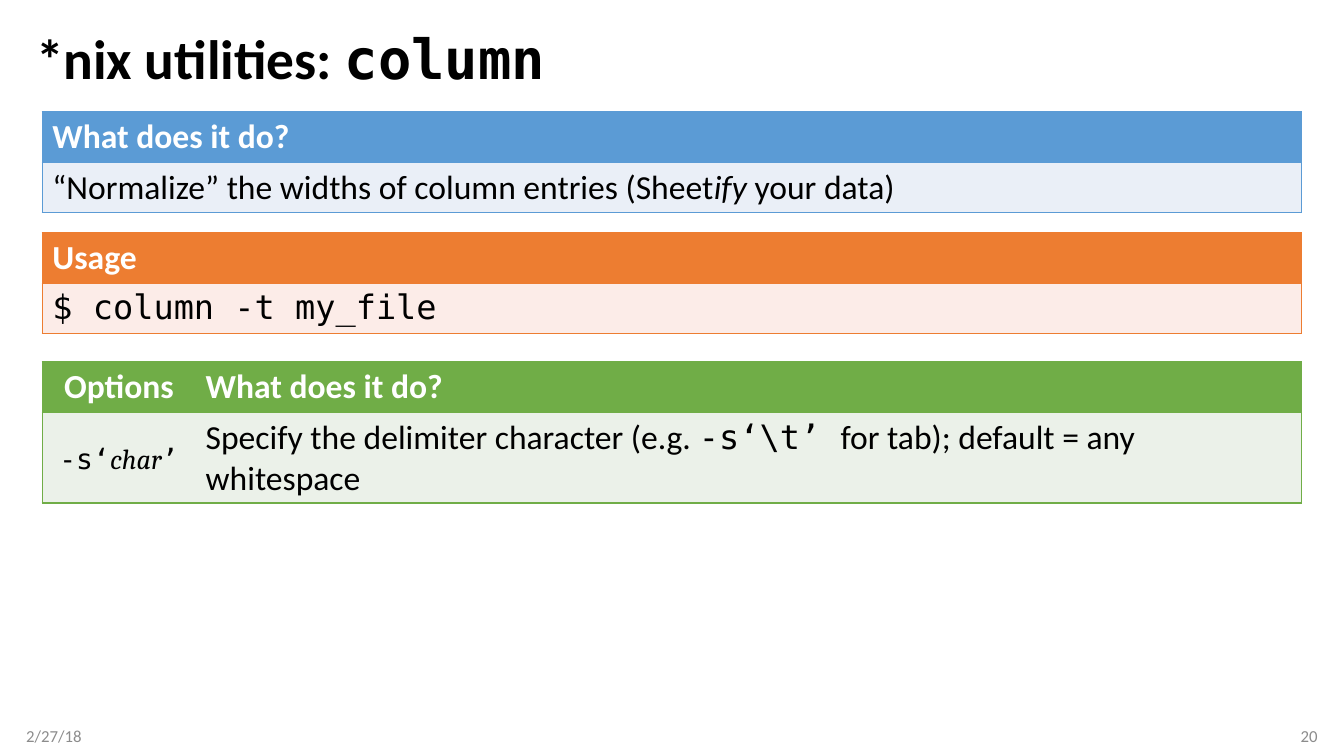
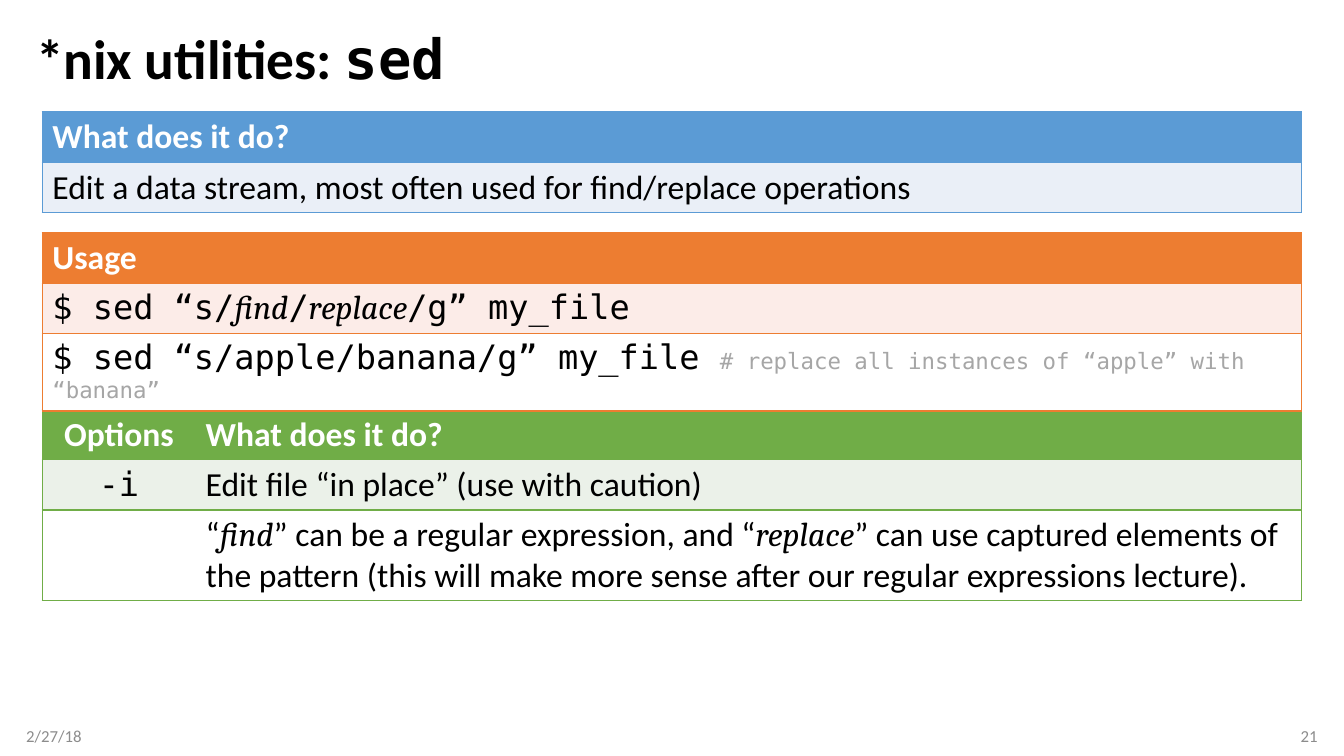
from dataclasses import dataclass, field

import pptx
import pptx.dml.color
import pptx.enum.text
import pptx.oxml
import pptx.oxml.ns
import pptx.util

Pt = pptx.util.Pt
RGBColor = pptx.dml.color.RGBColor
Align = pptx.enum.text.PP_ALIGN
Anchor = pptx.enum.text.MSO_ANCHOR

BLACK = RGBColor(0x00, 0x00, 0x00)
WHITE = RGBColor(0xFF, 0xFF, 0xFF)
FOOTER_GRAY = RGBColor(0x8C, 0x8C, 0x8C)
REMARK_GRAY = RGBColor(0xA6, 0xA6, 0xA6)
BLUE, BLUE_TINT = RGBColor(0x5B, 0x9B, 0xD5), RGBColor(0xEA, 0xEF, 0xF7)
ORANGE, ORANGE_TINT = RGBColor(0xED, 0x7D, 0x31), RGBColor(0xFC, 0xEC, 0xE8)
GREEN, GREEN_TINT = RGBColor(0x70, 0xAD, 0x47), RGBColor(0xEB, 0xF1, 0xE9)

PAGE_WIDTH, PAGE_HEIGHT = 960, 540
MARGIN = 18.75
FOOTER_TOP, FOOTER_WIDTH, FOOTER_HEIGHT = 511, 216, 29
TABLE_LEFT, ROW_HEIGHT = 30.25, 29.5
OPTION_WIDTH, TEXT_WIDTH = 109.5, 789.75
PURPOSE_TOP, USAGE_TOP = 80, 166.25

BODY = {"name": "Calibri", "size": Pt(24), "bold": False, "italic": False, "color": BLACK}
HEADER = {**BODY, "bold": True, "color": WHITE}
CODE = {**BODY, "name": "DejaVu Sans Mono"}
VARIABLE = {**BODY, "name": "Cambria", "italic": True}
REMARK = {**CODE, "size": Pt(16), "color": REMARK_GRAY}
SMALL = {"size": Pt(20)}
TITLE = {**BODY, "size": Pt(39.6), "bold": True}
TITLE_CODE = {**TITLE, "name": CODE["name"]}
FOOTER = {**BODY, "size": Pt(12), "color": FOOTER_GRAY}


@dataclass
class Span:
    text: str
    format: dict = field(default_factory=lambda: BODY)


Line = list[Span]


@dataclass
class Panel:
    """A table with a coloured header row and striped rows below it."""
    top: float
    accent: RGBColor
    tint: RGBColor
    headers: list[str]
    rows: list[list[Line]]


@dataclass
class Utility:
    name: str
    number: int
    purpose: Line
    usage: list[Line]
    options_top: float
    options: list[list[Line]]


UTILITIES = [
    Utility(
        "column", 20,
        [Span("“Normalize” the widths of column entries (Sheet"),
         Span("ify", {**BODY, "italic": True}), Span(" your data)")],
        [[Span("$ column -t my_file", CODE)]],
        258.5,
        [[[Span("-s‘", {**CODE, **SMALL}), Span("char", {**VARIABLE, **SMALL}),
           Span("’", {**CODE, **SMALL}), Span(" ", CODE)],
          [Span("Specify the delimiter character (e.g. "), Span("-s‘\\t’ ", CODE),
           Span("for tab); default = any whitespace")]]],
    ),
    Utility(
        "sed", 21,
        [Span("Edit a data stream, most often used for find/replace operations")],
        [[Span("$ sed “s/", CODE), Span("find", VARIABLE), Span("/", CODE),
          Span("replace", VARIABLE), Span("/g” my_file", CODE)],
         [Span("$ sed “s/apple/banana/g” my_file ", CODE),
          Span("# replace all instances of “apple” with “banana”", REMARK)]],
        292.25,
        [[[Span("-i", CODE)], [Span("Edit file “in place” (use with caution)")]],
         [[], [Span("“"), Span("find", VARIABLE),
               Span("” can be a regular expression, and “"), Span("replace", VARIABLE),
               Span("” can use captured elements of the pattern (this will make more "
                    "sense after our regular expressions lecture).")]]],
    ),
]


def write_line(para, line: Line) -> None:
    for span in line:
        run = para.add_run()
        run.text = span.text
        for name, value in span.format.items():
            if name == "color":
                run.font.color.rgb = value
            else:
                setattr(run.font, name, value)


def add_text(page, left: float, top: float, width: float, height: float, line: Line,
             frame_format: dict, para_format: dict) -> None:
    box = page.shapes.add_textbox(Pt(left), Pt(top), Pt(width), Pt(height))
    frame = box.text_frame
    para = frame.paragraphs[0]
    base = {"word_wrap": True, "vertical_anchor": Anchor.MIDDLE}
    for target, values in ((frame, {**base, **frame_format}), (para, para_format)):
        for name, value in values.items():
            setattr(target, name, value)
    write_line(para, line)


def add_borders(cell, color: RGBColor, first: bool, last: bool) -> None:
    """Draw lines above, below and on the outer sides, none between columns."""
    properties = cell._tc.get_or_add_tcPr()
    for side, drawn in (("L", first), ("R", last), ("T", True), ("B", True)):
        paint = (f'<a:solidFill><a:srgbClr val="{color}"/></a:solidFill>'
                 if drawn else "<a:noFill/>")
        properties.append(pptx.oxml.parse_xml(
            f'<a:ln{side} {pptx.oxml.ns.nsdecls("a")} w="{Pt(1)}">{paint}</a:ln{side}>'))


def add_panel(page, panel: Panel) -> None:
    lines = [[[Span(text, HEADER)] for text in panel.headers], *panel.rows]
    count = len(panel.headers)
    split = count > 1
    widths = [OPTION_WIDTH, TEXT_WIDTH] if split else [OPTION_WIDTH + TEXT_WIDTH]
    table = page.shapes.add_table(
        len(lines), count, Pt(TABLE_LEFT), Pt(panel.top),
        Pt(sum(widths)), Pt(ROW_HEIGHT * len(lines))).table
    table.first_row = table.horz_banding = False
    for column, width in zip(table.columns, widths):
        column.width = Pt(width)
    for row, row_lines in enumerate(lines):
        table.rows[row].height = Pt(ROW_HEIGHT)
        stripe = panel.tint if row % 2 else WHITE
        for column, line in enumerate(row_lines):
            cell = table.cell(row, column)
            add_borders(cell, panel.accent, column == 0, column == count - 1)
            cell.fill.solid()
            cell.fill.fore_color.rgb = stripe if row else panel.accent
            cell.vertical_anchor = Anchor.MIDDLE if split else Anchor.TOP
            para = cell.text_frame.paragraphs[0]
            para.alignment = Align.CENTER if split and column == 0 else Align.LEFT
            write_line(para, line)


def add_frame(page, name: str, number: int) -> None:
    """Add the title, the date and the page number."""
    add_text(page, MARGIN, 18, PAGE_WIDTH - 2 * MARGIN, 52,
             [Span("*nix utilities: ", TITLE), Span(name, TITLE_CODE)],
             {}, {"line_spacing": 0.9})
    right = PAGE_WIDTH - MARGIN - FOOTER_WIDTH
    for left, text, inset, alignment in (
            (MARGIN, "2/27/18", "margin_left", Align.LEFT),
            (right, str(number), "margin_right", Align.RIGHT)):
        add_text(page, left, FOOTER_TOP, FOOTER_WIDTH, FOOTER_HEIGHT,
                 [Span(text, FOOTER)], {inset: 0}, {"alignment": alignment})


def add_utility(deck, utility: Utility) -> None:
    page = deck.slides.add_slide(deck.slide_layouts[6])
    add_frame(page, utility.name, utility.number)
    question = "What does it do?"
    for panel in (
            Panel(PURPOSE_TOP, BLUE, BLUE_TINT, [question], [[utility.purpose]]),
            Panel(utility.options_top, GREEN, GREEN_TINT, ["Options", question],
                  utility.options),
            Panel(USAGE_TOP, ORANGE, ORANGE_TINT, ["Usage"],
                  [[line] for line in utility.usage])):
        add_panel(page, panel)


def main() -> None:
    deck = pptx.Presentation()
    deck.slide_width, deck.slide_height = Pt(PAGE_WIDTH), Pt(PAGE_HEIGHT)
    for utility in UTILITIES:
        add_utility(deck, utility)
    deck.save("out.pptx")


if __name__ == "__main__":
    main()
